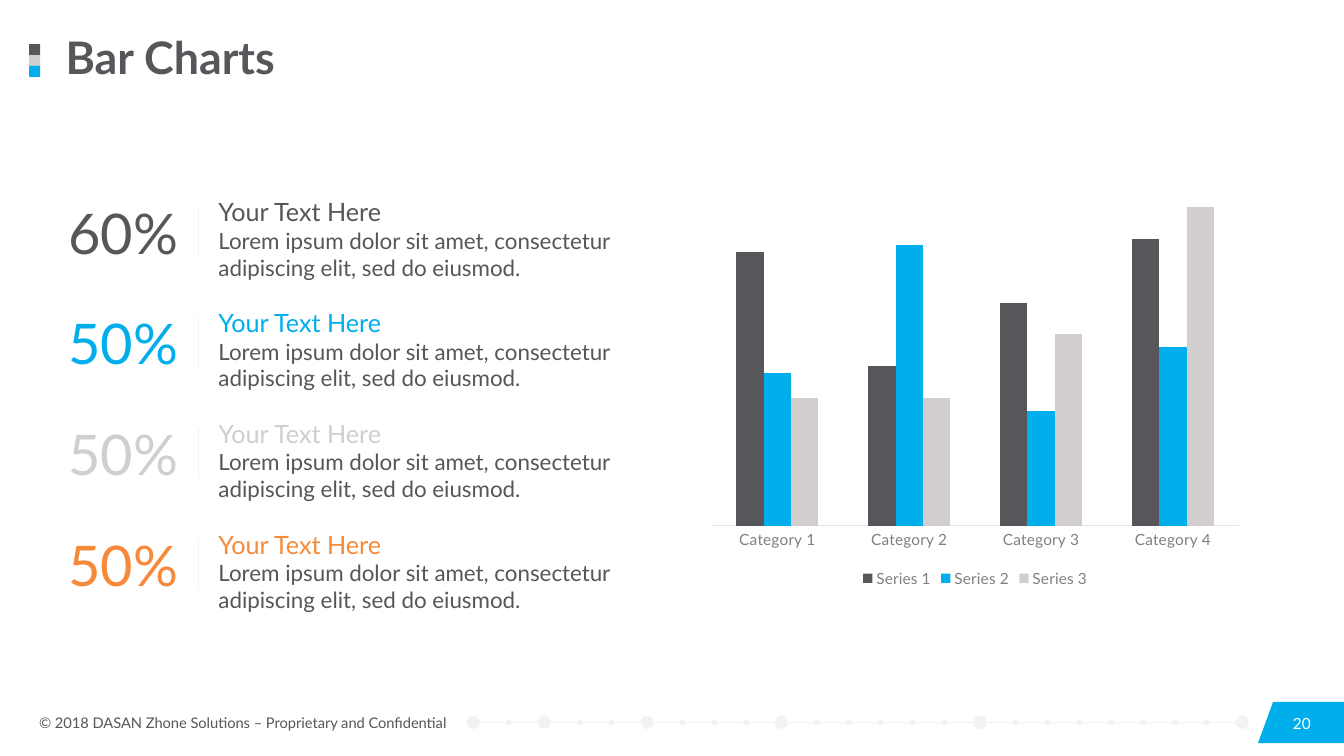
from dataclasses import dataclass

from lxml import etree
from pptx import Presentation
from pptx import util as u
from pptx.chart import data as chart_data
from pptx.dml.color import RGBColor
from pptx.enum import chart as charts, shapes, text
from pptx.oxml import ns


@dataclass(frozen=True)
class Theme:
    font: str = "Lato"
    dark: str = "56565B"
    blue: str = "00AEEB"
    silver: str = "D1CECD"
    orange: str = "F78A3A"
    pale: str = "F2F2F2"
    axis: str = "E5E5E7"
    label: str = "808080"
    white: str = "FFFFFF"
    title_size: float = 32
    percent_size: float = 40
    heading_size: float = 18
    body_size: float = 16
    label_size: float = 11
    footer_size: float = 10.5


def style_font(font, theme, size, color, bold=False):
    font.name, font.size, font.bold = theme.font, u.Pt(size), bold
    font.color.rgb = RGBColor.from_string(color)


def write(paragraph, words, theme, size, color, bold=False, align=text.PP_ALIGN.LEFT):
    paragraph.alignment = align
    run = paragraph.add_run()
    run.text = words
    style_font(run.font, theme, size, color, bold)


class SlideBuilder:
    def __init__(self, slide, theme):
        self.slide, self.theme = slide, theme

    def title(self, words, left, top, width, height):
        heading = self.slide.shapes.title
        heading.left, heading.top = u.Pt(left), u.Pt(top)
        heading.width, heading.height = u.Pt(width), u.Pt(height)
        frame = heading.text_frame
        frame.auto_size = text.MSO_AUTO_SIZE.NONE
        frame.vertical_anchor = text.MSO_ANCHOR.MIDDLE
        paragraph = frame.paragraphs[0]
        paragraph.line_spacing = 0.9
        write(paragraph, words, self.theme, self.theme.title_size, self.theme.dark, bold=True)

    def text_box(self, left, top, width, height):
        box = self.slide.shapes.add_textbox(u.Pt(left), u.Pt(top), u.Pt(width), u.Pt(height))
        box.text_frame.word_wrap = True
        return box.text_frame.paragraphs[0]

    def label(self, words, left, top, width, height, size, color, **form):
        write(self.text_box(left, top, width, height), words, self.theme, size, color, **form)

    def paint(self, shape, color):
        shape.shadow.inherit = False
        shape.fill.solid()
        shape.fill.fore_color.rgb = RGBColor.from_string(color)
        shape.line.fill.background()

    def block(self, kind, left, top, width, height, color):
        shape = self.slide.shapes.add_shape(
            kind, u.Pt(left), u.Pt(top), u.Pt(width), u.Pt(height))
        self.paint(shape, color)

    def polygon(self, points, color):
        corners = [(u.Pt(x), u.Pt(y)) for x, y in points]
        outline = self.slide.shapes.build_freeform(*corners[0])
        outline.add_line_segments(corners[1:], close=True)
        self.paint(outline.convert_to_shape(), color)

    def rule(self, x1, y1, x2, y2):
        line = self.slide.shapes.add_connector(
            shapes.MSO_CONNECTOR.STRAIGHT, u.Pt(x1), u.Pt(y1), u.Pt(x2), u.Pt(y2))
        line.line.color.rgb = RGBColor.from_string(self.theme.pale)
        line.line.width = u.Pt(0.5)
        etree.SubElement(line._element.spPr, ns.qn("a:effectLst"))

    def column_chart(self, categories, series, left, top, width, height):
        theme = self.theme
        values = chart_data.CategoryChartData()
        values.categories = categories
        for name, numbers, _ in series:
            values.add_series(name, numbers)
        chart = self.slide.shapes.add_chart(
            charts.XL_CHART_TYPE.COLUMN_CLUSTERED,
            u.Pt(left), u.Pt(top), u.Pt(width), u.Pt(height), values).chart
        chart.has_title = False
        style_font(chart.font, theme, 10, theme.dark)

        # Columns
        plot = chart.plots[0]
        plot.gap_width, plot.overlap, plot.vary_by_categories = 182, 0, False
        for columns, (_, _, color) in zip(plot.series, series):
            columns.format.fill.solid()
            columns.format.fill.fore_color.rgb = RGBColor.from_string(color)

        # Axes
        value_axis = chart.value_axis
        value_axis.visible = value_axis.has_major_gridlines = False
        value_axis.minimum_scale, value_axis.maximum_scale = 0, 120
        category_axis = chart.category_axis
        category_axis.major_tick_mark = charts.XL_TICK_MARK.NONE
        category_axis.format.line.color.rgb = RGBColor.from_string(theme.axis)
        category_axis.format.line.width = u.Pt(0.75)
        style_font(category_axis.tick_labels.font, theme, theme.label_size, theme.label)

        # Legend
        chart.has_legend = True
        chart.legend.position = charts.XL_LEGEND_POSITION.BOTTOM
        chart.legend.include_in_layout = False
        style_font(chart.legend.font, theme, theme.label_size, theme.label)

    def statistic(self, percent, heading, body, color, top):
        theme = self.theme
        paragraph = self.text_box(149, top, 336.2, 67.7)
        write(paragraph, heading, theme, theme.heading_size, color)
        paragraph.add_line_break()
        write(paragraph, body, theme, theme.body_size, theme.dark)
        self.label(percent, 41.8, top + 1, 95, 55.4, theme.percent_size, color)
        self.rule(141.8, top + 10.6, 141.8, top + 47.3)


def main():
    theme = Theme()
    deck = Presentation()
    deck.slide_width, deck.slide_height = u.Pt(960), u.Pt(540)
    page = SlideBuilder(deck.slides.add_slide(deck.slide_layouts[5]), theme)
    oval, square = shapes.MSO_SHAPE.OVAL, shapes.MSO_SHAPE.RECTANGLE

    # Title and its three-colour marker
    page.title("Bar Charts", 39.6, 23, 920.4, 39.6)
    marker_side = 7.8
    for i, color in enumerate((theme.dark, theme.silver, theme.blue)):
        page.block(square, 20.9, 31.5 + i * marker_side, marker_side, marker_side, color)

    # Footer with page number
    page.polygon([(909.4, 501.3), (960, 501.3), (960, 530.8), (898.6, 530.8)], theme.blue)
    page.label("© 2018 DASAN Zhone Solutions – Proprietary and Confidential",
               20.9, 506.2, 309.6, 20, theme.footer_size, theme.dark)
    page.label("20", 902.9, 506.2, 54, 20.9, theme.label_size, theme.white,
               align=text.PP_ALIGN.CENTER)

    # Dotted footer line: equal gaps between large and small dots
    dots_middle, dot_gap, dot_left = 516, 18.47, 333.4
    page.rule(335.5, dots_middle, 884.2, dots_middle)
    for i in range(24):
        size = 9.4 if i in (0, 2, 5, 9, 15, 23) else 4.3
        page.block(oval, dot_left, dots_middle - size / 2, size, size, theme.pale)
        dot_left += size + dot_gap

    # Chart
    page.column_chart(
        [f"Category {n}" for n in range(1, 5)],
        [("Series 1", (86, 50, 70, 90), theme.dark),
         ("Series 2", (48, 88, 36, 56), theme.blue),
         ("Series 3", (40, 40, 60, 100), theme.silver)],
        500.4, 95.8, 392.4, 326.9)

    # Statistics
    statistics = [("60%", theme.dark), ("50%", theme.blue),
                  ("50%", theme.silver), ("50%", theme.orange)]
    for i, (percent, color) in enumerate(statistics):
        page.statistic(percent, "Your Text Here",
                       "Lorem ipsum dolor sit amet, consectetur adipiscing elit, sed do eiusmod.",
                       color, 137 + i * 79.1)

    deck.save("out.pptx")


if __name__ == "__main__":
    main()
